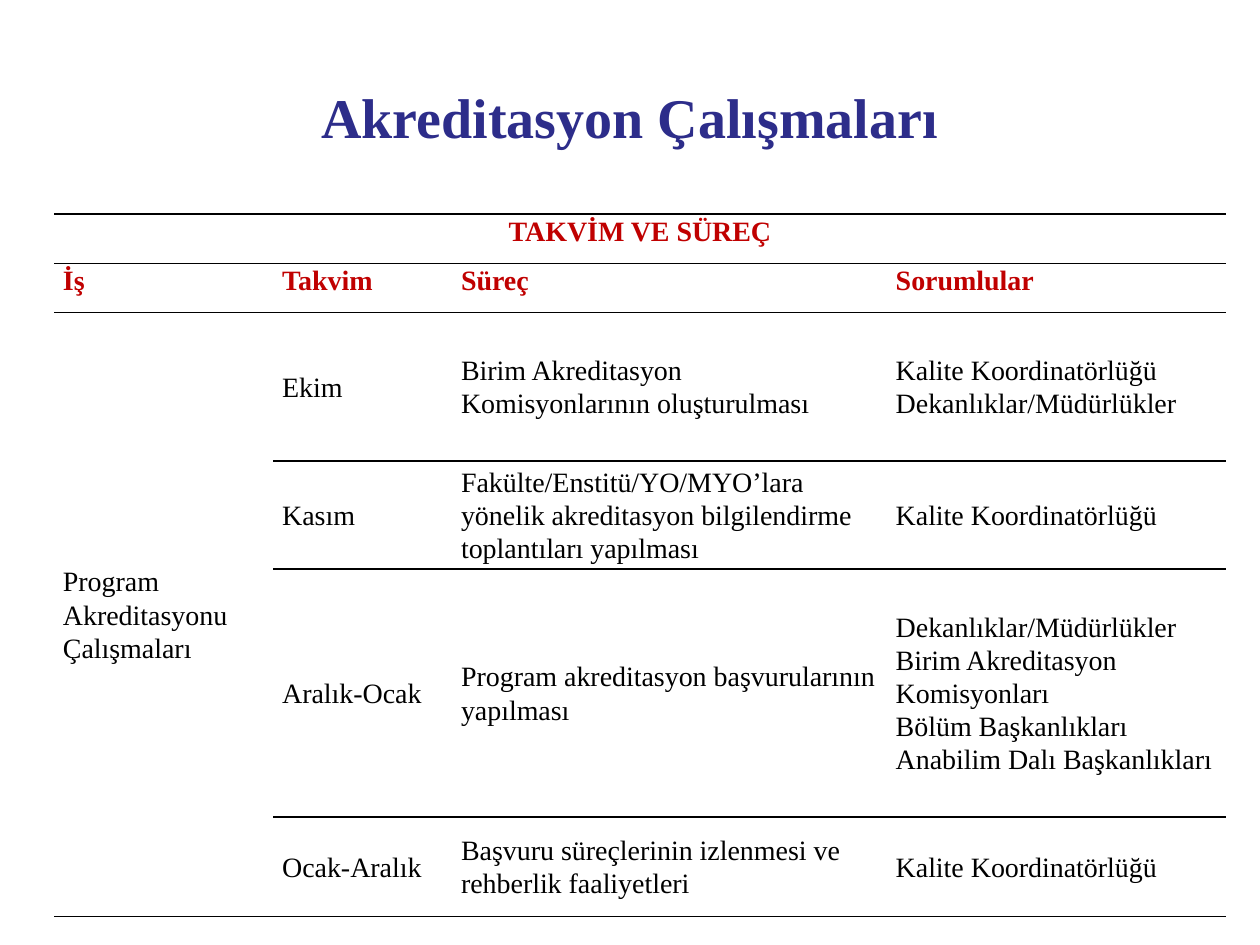
"""Build the accreditation calendar slide."""
from dataclasses import dataclass

from lxml.etree import SubElement
from pptx import Presentation
from pptx.dml.color import RGBColor
from pptx.enum.text import MSO_ANCHOR as ANCHOR, PP_ALIGN as ALIGN
from pptx.oxml.ns import qn
from pptx.util import Inches, Pt

FONT = "Times New Roman"
NAVY, RED, BLACK = "2D2D8A", "C00000", "000000"
COLUMNS = (1.74, 1.42, 3.45, 2.69)
ROWS = (0.39, 0.39, 1.18, 0.79, 1.97, 0.79)
HEADINGS = ("İş", "Takvim", "Süreç", "Sorumlular")
WORK = "Program Akreditasyonu Çalışmaları"


@dataclass
class Step:
    period: str
    process: str
    owners: str


STEPS = (
    Step("Ekim", "Birim Akreditasyon Komisyonlarının oluşturulması",
         "Kalite Koordinatörlüğü\nDekanlıklar/Müdürlükler"),
    Step("Kasım", "Fakülte/Enstitü/YO/MYO’lara yönelik akreditasyon "
         "bilgilendirme toplantıları yapılması", "Kalite Koordinatörlüğü"),
    Step("Aralık-Ocak", "Program akreditasyon başvurularının yapılması",
         "Dekanlıklar/Müdürlükler\nBirim Akreditasyon Komisyonları\n"
         "Bölüm Başkanlıkları\nAnabilim Dalı Başkanlıkları"),
    Step("Ocak-Aralık", "Başvuru süreçlerinin izlenmesi ve rehberlik faaliyetleri",
         "Kalite Koordinatörlüğü"),
)


def rgb(color: str) -> RGBColor:
    return RGBColor.from_string(color)


def write(tf, text: str, *, size: float = 16, color: str = BLACK,
          bold: bool = False, align=ALIGN.LEFT, spacing: float = 1.07) -> None:
    for i, line in enumerate(text.split("\n")):
        p = tf.add_paragraph() if i else tf.paragraphs[0]
        p.alignment, p.line_spacing = align, spacing
        r = p.add_run()
        r.text = line
        r.font.name, r.font.size, r.font.bold = FONT, Pt(size), bold
        r.font.color.rgb = rgb(color)


def set_borders(cell, top: bool = True, bottom: bool = True) -> None:
    tc_pr = cell._tc.get_or_add_tcPr()
    sides = {"a:lnL": False, "a:lnR": False, "a:lnT": top, "a:lnB": bottom}
    for tag, visible in sides.items():
        ln = SubElement(tc_pr, qn(tag), w=str(Pt(1)))
        if visible:
            fill = SubElement(ln, qn("a:solidFill"))
            SubElement(fill, qn("a:srgbClr"), val=BLACK)
        else:
            SubElement(ln, qn("a:noFill"))


def add_title(slide, text: str) -> None:
    s = slide.shapes.add_textbox(Inches(0.5), Inches(0.3), Inches(9), Inches(1.25))
    tf = s.text_frame
    tf.word_wrap, tf.vertical_anchor = True, ANCHOR.MIDDLE
    write(tf, text, size=32, color=NAVY, bold=True, align=ALIGN.CENTER, spacing=1.0)


def add_calendar(slide) -> None:
    frame = slide.shapes.add_table(len(ROWS), len(COLUMNS), Inches(0.43), Inches(1.7),
                                   Inches(sum(COLUMNS)), Inches(sum(ROWS)))
    table = frame.table
    table.first_row = table.horz_banding = False
    for column, width in zip(table.columns, COLUMNS):
        column.width = Inches(width)
    for row, height in zip(table.rows, ROWS):
        row.height = Inches(height)
    last = len(ROWS) - 1
    table.cell(0, 0).merge(table.cell(0, len(COLUMNS) - 1))
    table.cell(2, 0).merge(table.cell(last, 0))

    for i in range(len(ROWS)):
        for j in range(len(COLUMNS)):
            cell = table.cell(i, j)
            cell.margin_left = cell.margin_right = Inches(0.07)
            cell.margin_top = cell.margin_bottom = 0
            cell.vertical_anchor = ANCHOR.MIDDLE if i > 1 else ANCHOR.TOP
            inner = j == 0 and i > 2
            set_borders(cell, top=not inner, bottom=not inner or i == last)
            cell.fill.background()

    write(table.cell(0, 0).text_frame, "TAKVİM VE SÜREÇ", color=RED, bold=True,
          align=ALIGN.CENTER)
    for j, heading in enumerate(HEADINGS):
        write(table.cell(1, j).text_frame, heading, color=RED, bold=True,
              align=ALIGN.JUSTIFY)
    write(table.cell(2, 0).text_frame, WORK)
    for i, step in enumerate(STEPS, 2):
        for j, text in enumerate((step.period, step.process, step.owners), 1):
            write(table.cell(i, j).text_frame, text)


def main() -> None:
    prs = Presentation()
    prs.slide_width, prs.slide_height = Inches(10), Inches(7.5)
    slide = prs.slides.add_slide(prs.slide_layouts[6])
    add_title(slide, "Akreditasyon Çalışmaları")
    add_calendar(slide)
    prs.save("out.pptx")


if __name__ == "__main__":
    main()
